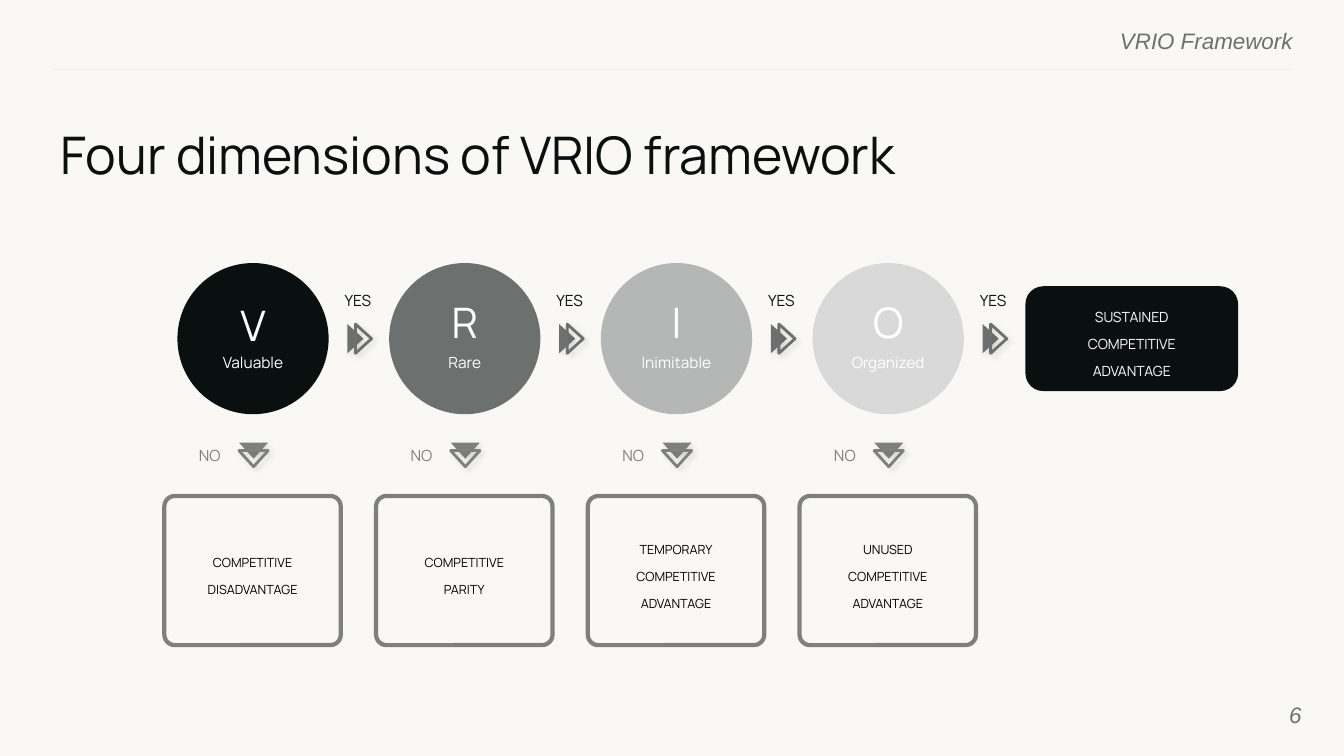
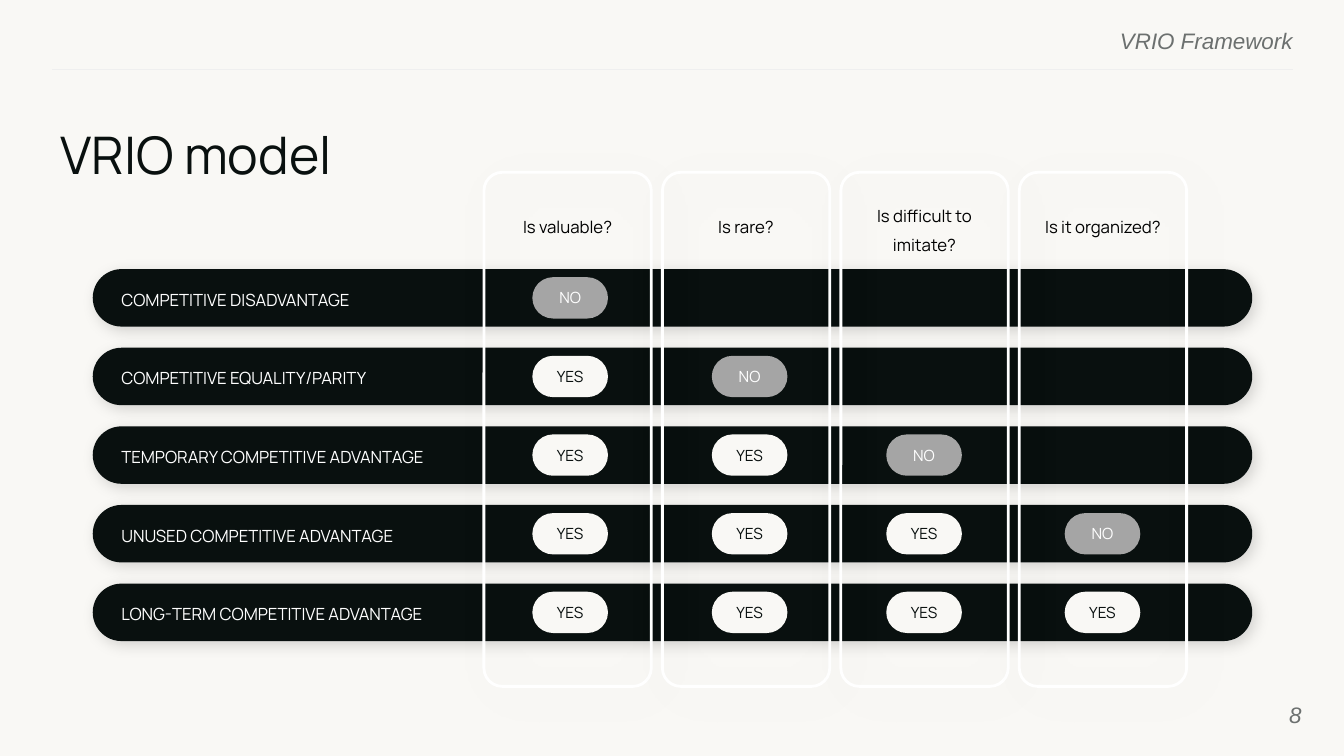
"""Build two VRIO framework slides: the decision path and the model matrix."""
import lxml.etree
import pptx
import pptx.dml.color
import pptx.enum.shapes
import pptx.enum.text
import pptx.oxml.ns
import pptx.util

Inches = pptx.util.Inches
Pt = pptx.util.Pt
Shapes = pptx.enum.shapes.MSO_SHAPE
Align = pptx.enum.text.PP_ALIGN
Anchor = pptx.enum.text.MSO_ANCHOR
qualified = pptx.oxml.ns.qn

COLORS = {
    "paper": "F9F8F5", "ink": "09100F", "slate": "6C706F", "silver": "B5B7B7",
    "mist": "D9D9D9", "gray": "7F7F7F", "pill": "A5A5A5", "rule": "EFEFEF",
    "white": "FFFFFF", "black": "000000",
}
FONT = "Manrope"
RUNNING_FONT = "Arial"

CHEVRON_SHADOW = (9, 4, 3)
BAR_SHADOW = (14, 10.4, 3)
COLUMN_SHADOW = (7, 33, 7.9)

DIMENSIONS = [
    ("V", "Valuable", "ink", 2.97, ["COMPETITIVE DISADVANTAGE"]),
    ("R", "Rare", "slate", 2.94, ["COMPETITIVE", "PARITY"]),
    ("I", "Inimitable", "silver", 2.94, ["TEMPORARY", "COMPETITIVE", "ADVANTAGE"]),
    ("O", "Organized", "mist", 2.94, ["UNUSED", "COMPETITIVE", "ADVANTAGE"]),
]
OUTCOMES = [
    "COMPETITIVE DISADVANTAGE", "COMPETITIVE EQUALITY/PARITY",
    "TEMPORARY COMPETITIVE ADVANTAGE", "UNUSED COMPETITIVE ADVANTAGE",
    "LONG-TERM COMPETITIVE ADVANTAGE",
]
QUESTIONS = ["Is valuable?", "Is rare?", "Is difficult to imitate?", "Is it organized?"]
PILL_LEFTS = [5.28, 7.06, 8.79, 10.56]


def rgb(name):
    """Return the named colour."""
    return pptx.dml.color.RGBColor.from_string(COLORS[name])


def frame(box):
    """Convert left, top, width and height from inches."""
    return [Inches(length) for length in box]


def write(shape, lines, size, color, align=Align.CENTER, anchor=Anchor.MIDDLE,
          insets=(0, 0, 0, 0), spacing=None, font=FONT, italic=False):
    """Fill a shape with one paragraph per line."""
    text_frame = shape.text_frame
    text_frame.word_wrap = True
    text_frame.vertical_anchor = anchor
    (text_frame.margin_left, text_frame.margin_top,
     text_frame.margin_right, text_frame.margin_bottom) = frame(insets)
    text_frame.text = "\n".join(lines)
    for paragraph in text_frame.paragraphs:
        paragraph.alignment = align
        if spacing:
            paragraph.line_spacing = spacing
        paragraph.font.name = font
        paragraph.font.size = Pt(size)
        paragraph.font.italic = italic
        paragraph.font.color.rgb = rgb(color)


def add_text(slide, box, lines, size, color, **style):
    """Add a text box."""
    write(slide.shapes.add_textbox(*frame(box)), lines, size, color, **style)


def cast_shadow(shape, opacity, blur, distance):
    """Give a shape a soft black shadow towards the lower right."""
    effects = shape._element.spPr.find(qualified("a:effectLst"))
    shadow = lxml.etree.SubElement(
        effects, qualified("a:outerShdw"), blurRad=str(Pt(blur)),
        dist=str(Pt(distance)), dir="2700000", algn="tl", rotWithShape="0")
    color = lxml.etree.SubElement(shadow, qualified("a:srgbClr"), val=COLORS["black"])
    lxml.etree.SubElement(color, qualified("a:alpha"), val=str(opacity * 1000))


def add_shape(slide, kind, box, fill=None, line=None, width=2,
              corner=None, rotation=0, shadow=None):
    """Add a preset shape with the given fill, outline and shadow."""
    shape = slide.shapes.add_shape(kind, *frame(box))
    shape.rotation = rotation
    if corner is not None:
        shape.adjustments[0] = corner
    if fill:
        shape.fill.solid()
        shape.fill.fore_color.rgb = rgb(fill)
    else:
        shape.fill.background()
    if line:
        shape.line.color.rgb = rgb(line)
        shape.line.width = Pt(width)
    else:
        shape.line.fill.background()
    shape.shadow.inherit = False
    if shadow:
        cast_shadow(shape, *shadow)
    return shape


def add_chevron(slide, left, top, color, rotation, step):
    """Add a solid triangle followed by an outlined one, a step further on."""
    across, down = step
    add_shape(slide, Shapes.ISOSCELES_TRIANGLE, (left, top, 0.29, 0.16),
              fill=color, rotation=rotation, shadow=CHEVRON_SHADOW)
    add_shape(slide, Shapes.ISOSCELES_TRIANGLE, (left + across, top + down, 0.29, 0.16),
              line=color, rotation=rotation, shadow=CHEVRON_SHADOW)


def add_base_slide(presentation, title, number):
    """Add a slide with the running header, rule, title and page number."""
    slide = presentation.slides.add_slide(presentation.slide_layouts[6])
    running = {"align": Align.RIGHT, "font": RUNNING_FONT, "italic": True}
    add_text(slide, (7.68, 0.27, 5.14, 0.24), ["VRIO Framework"], 16, "slate",
             anchor=Anchor.TOP, **running)
    rule = slide.shapes.add_connector(
        pptx.enum.shapes.MSO_CONNECTOR.STRAIGHT, *frame((12.82, 0.69, 0.52, 0.69)))
    rule.line.color.rgb = rgb("rule")
    rule.line.width = Pt(0.75)
    lxml.etree.SubElement(rule._element.spPr, qualified("a:effectLst"))
    add_text(slide, (0.6, 1.22, 12.3, 0.68), [title], 37, "ink",
             align=Align.LEFT, anchor=Anchor.TOP)
    add_text(slide, (12.11, 6.8, 0.8, 0.57), [str(number)], 16, "slate", **running)
    return slide


def add_dimension(slide, left, letter, name, color, letter_top, outcome):
    """Add one dimension with its yes and no branches."""
    circle = add_shape(slide, Shapes.OVAL, (left, 2.61, 1.5, 1.5), fill=color)
    write(circle, [name], 11, "white", anchor=Anchor.BOTTOM, insets=(0, 0, 0, 0.2))
    add_text(slide, (left + 0.33, letter_top, 0.84, 0.61), [letter], 30, "white",
             insets=(0, 0, 0, 0.1))
    add_chevron(slide, left + 1.62, 3.28, "slate", 90, (0.08, 0))
    add_text(slide, (left + 1.54, 2.88, 0.5, 0.19), ["YES"], 11, "ink")
    add_chevron(slide, left + 0.61, 4.39, "gray", 180, (0, 0.08))
    add_text(slide, (left + 0.07, 4.42, 0.5, 0.19), ["NO"], 11, "gray")
    box = add_shape(slide, Shapes.ROUNDED_RECTANGLE, (left - 0.13, 4.92, 1.75, 1.48),
                    fill="paper", line="gray", width=3, corner=0.07)
    write(box, outcome, 9, "black", spacing=1.78)


def build_dimensions(presentation):
    """Build the slide with the four dimensions."""
    slide = add_base_slide(presentation, "Four dimensions of VRIO framework", 6)
    for index, dimension in enumerate(DIMENSIONS):
        add_dimension(slide, 1.76 + 2.1 * index, *dimension)
    result = add_shape(slide, Shapes.ROUNDED_RECTANGLE, (10.17, 2.84, 2.11, 1.04),
                       fill="ink", corner=0.17)
    write(result, ["SUSTAINED", "COMPETITIVE", "ADVANTAGE"], 10, "white",
          insets=(0.03, 0.03, 0.03, 0.03), spacing=1.62)


def add_pill(slide, left, top, is_yes):
    """Add a yes or no answer pill."""
    answer, fill, color = ("YES", "paper", "ink") if is_yes else ("NO", "pill", "white")
    pill = add_shape(slide, Shapes.ROUNDED_RECTANGLE, (left, top, 0.75, 0.41),
                     fill=fill, corner=0.5)
    write(pill, [answer], 11, color)


def build_model(presentation):
    """Build the slide with the outcome and question matrix."""
    slide = add_base_slide(presentation, "VRIO model", 8)
    row_tops = [2.67 + 0.78 * row for row in range(len(OUTCOMES))]
    for top, outcome in zip(row_tops, OUTCOMES):
        bar = add_shape(slide, Shapes.ROUNDED_RECTANGLE, (0.92, top, 11.5, 0.57),
                        fill="ink", corner=0.5, shadow=BAR_SHADOW)
        write(bar, [outcome], 12, "white", align=Align.LEFT,
              insets=(0.2, 0, 0, 0), spacing=1.17)
    for index, question in enumerate(QUESTIONS):
        left = 4.8 + 1.77 * index
        add_shape(slide, Shapes.ROUNDED_RECTANGLE, (left, 1.71, 1.66, 5.1),
                  line="white", corner=0.11, shadow=COLUMN_SHADOW)
        top, height = (2, 0.49) if question == "Is difficult to imitate?" else (2.11, 0.2)
        add_text(slide, (left + 0.06, top, 1.54, height), [question], 12, "black",
                 spacing=1.43)
    for row, top in enumerate(row_tops):
        for column, left in enumerate(PILL_LEFTS[:row + 1]):
            add_pill(slide, left, top + 0.08, column < row)


def main():
    """Create and save the presentation."""
    presentation = pptx.Presentation()
    presentation.slide_width = Inches(13.33)
    presentation.slide_height = Inches(7.5)
    background = presentation.slide_master.background.fill
    background.solid()
    background.fore_color.rgb = rgb("paper")
    build_dimensions(presentation)
    build_model(presentation)
    presentation.save("out.pptx")


if __name__ == "__main__":
    main()
